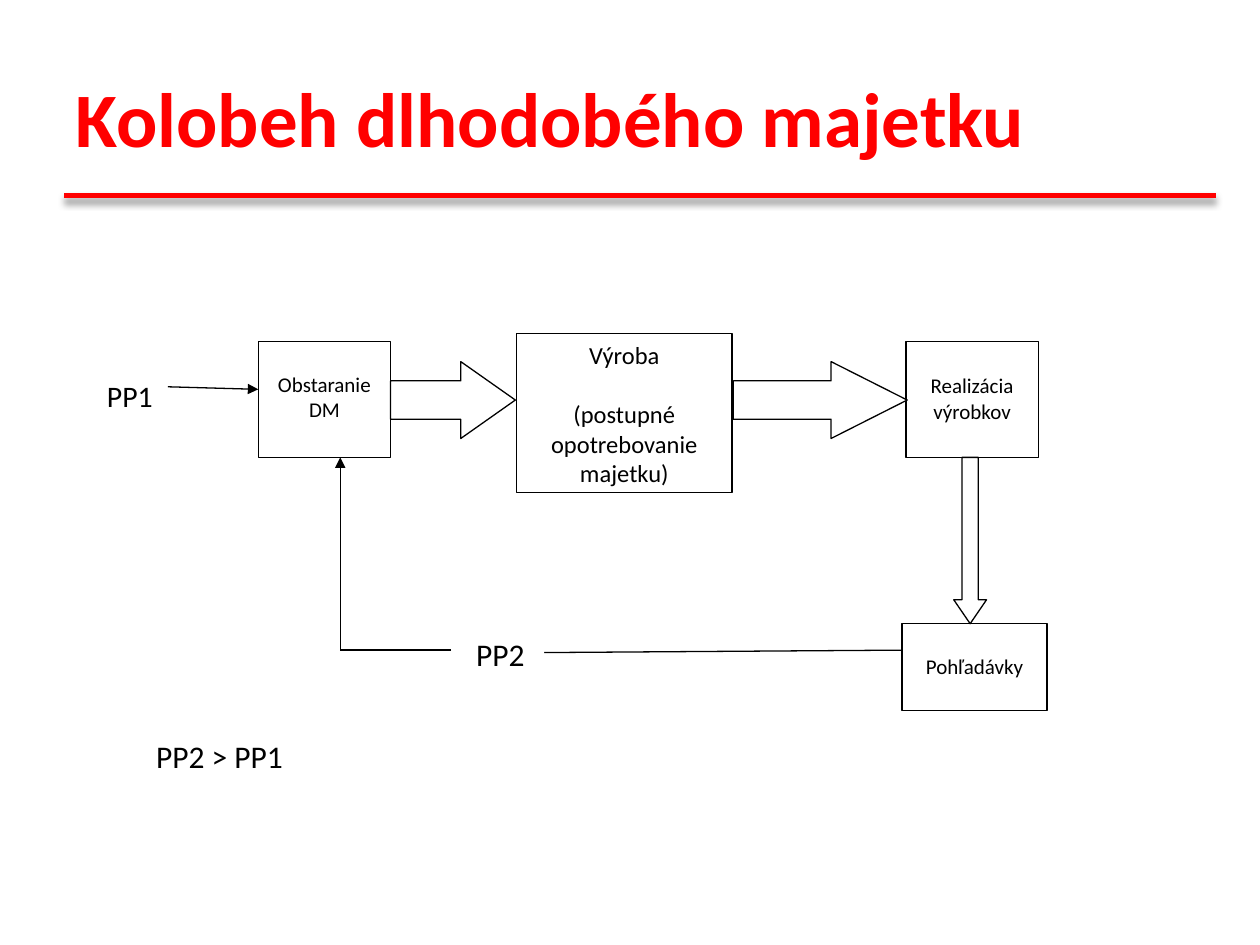
from dataclasses import dataclass

from lxml.etree import SubElement
from pptx import Presentation
from pptx.dml.color import RGBColor
from pptx.enum.shapes import MSO_CONNECTOR, MSO_SHAPE
from pptx.enum.text import MSO_ANCHOR, PP_ALIGN
from pptx.oxml.ns import qn
from pptx.util import Inches, Pt


@dataclass(frozen=True)
class Theme:
    font: str = "Calibri"
    red: RGBColor = RGBColor(0xFF, 0x00, 0x00)
    black: RGBColor = RGBColor(0x00, 0x00, 0x00)
    white: RGBColor = RGBColor(0xFF, 0xFF, 0xFF)
    title: int = 44
    label: int = 18
    start_label: int = 17
    main_step: int = 14
    step: int = 12
    outline: float = 0.75
    rule: int = 3


theme = Theme()
prs = Presentation()
prs.slide_width, prs.slide_height = Inches(10), Inches(7.5)
slide = prs.slides.add_slide(prs.slide_layouts[6])


def write(holder, lines, size, color=theme.black, align=PP_ALIGN.LEFT,
          anchor=MSO_ANCHOR.TOP, top=0.05, side=0.1, gap=0, bold=False):
    frame = holder.text_frame
    frame.word_wrap = True
    frame.vertical_anchor = anchor
    frame.margin_top = Inches(top)
    frame.margin_right = Inches(side)
    for i, line in enumerate(lines):
        paragraph = frame.paragraphs[0] if i == 0 else frame.add_paragraph()
        paragraph.text = line
        paragraph.alignment = align
        if i:
            paragraph.space_before = Pt(gap)
        font = paragraph.font
        font.name, font.size, font.bold = theme.font, Pt(size), bold
        font.color.rgb = color


def draw_line(x1, y1, x2, y2, color=theme.black, width=theme.outline, arrow=False):
    line = slide.shapes.add_connector(
        MSO_CONNECTOR.STRAIGHT, Inches(x1), Inches(y1), Inches(x2), Inches(y2))
    line.line.color.rgb = color
    line.line.width = Pt(width)
    if arrow:
        SubElement(line.line._get_or_add_ln(), qn("a:tailEnd"), type="triangle")
    return SubElement(line._element.spPr, qn("a:effectLst"))


# Title and its shadowed rule
rule_effects = draw_line(0.51, 1.55, 9.65, 1.55, theme.red, theme.rule)
shadow = SubElement(rule_effects, qn("a:outerShdw"), blurRad=str(Pt(4)),
                    dist=str(Pt(3)), dir="5400000", rotWithShape="0")
shadow_color = SubElement(shadow, qn("a:srgbClr"), val=str(theme.black))
SubElement(shadow_color, qn("a:alpha"), val="40000")

title = slide.shapes.add_textbox(Inches(0.5), Inches(0.3), Inches(9), Inches(1.25))
write(title, ["Kolobeh dlhodobého majetku"], theme.title, theme.red,
      anchor=MSO_ANCHOR.MIDDLE, bold=True)

# Steps of the cycle: position, lines, size, top margin, gap between lines
steps = [
    ((2.05, 2.71, 1.05, 0.92), ["Obstaranie", "DM"], theme.step, 0.24, 0),
    ((7.19, 2.71, 1.05, 0.92), ["Realizácia výrobkov"], theme.step, 0.25, 0),
    ((4.1, 2.65, 1.71, 1.26), ["Výroba", "(postupné opotrebovanie majetku)"],
     theme.main_step, 0.05, 17),
    ((7.16, 4.95, 1.15, 0.69), ["Pohľadávky"], theme.step, 0.24, 0),
]
for place, lines, size, top, gap in steps:
    step = slide.shapes.add_shape(MSO_SHAPE.RECTANGLE, *map(Inches, place))
    step.shadow.inherit = False
    step.fill.solid()
    step.fill.fore_color.rgb = theme.white
    step.line.color.rgb = theme.black
    step.line.width = Pt(theme.outline)
    write(step, lines, size, align=PP_ALIGN.CENTER, top=top, gap=gap)

# Block arrows between the steps: preset, position, head length
flows = [
    (MSO_SHAPE.RIGHT_ARROW, (3.1, 2.87, 0.99, 0.61), 0.71),
    (MSO_SHAPE.RIGHT_ARROW, (5.82, 2.87, 1.38, 0.61), 0.99),
    (MSO_SHAPE.DOWN_ARROW, (7.57, 3.63, 0.26, 1.32), 0.73),
]
for preset, place, head in flows:
    flow = slide.shapes.add_shape(preset, *map(Inches, place))
    flow.shadow.inherit = False
    flow.adjustments[0], flow.adjustments[1] = 0.5, head
    flow.fill.solid()
    flow.fill.fore_color.rgb = theme.white
    flow.line.color.rgb = theme.black
    flow.line.width = Pt(theme.outline)

# Money going in (PP1) and coming back (PP2)
draw_line(1.33, 3.07, 2.05, 3.09, arrow=True)
draw_line(7.16, 5.16, 4.2, 5.18)
draw_line(3.58, 5.16, 2.7, 5.16)
draw_line(2.7, 5.16, 2.7, 3.63, arrow=True)

# Money labels
for place, label, size, top in [
    ((0.75, 2.61, 0.58, 0.8), "PP1", theme.start_label, 0.39),
    ((3.68, 4.99, 0.64, 0.78), "PP2", theme.label, 0.05),
]:
    money = slide.shapes.add_shape(MSO_SHAPE.RECTANGLE, *map(Inches, place))
    money.shadow.inherit = False
    money.fill.solid()
    money.fill.fore_color.rgb = theme.white
    money.line.fill.background()
    write(money, [label], size, top=top, side=0)

# Conclusion
conclusion = slide.shapes.add_textbox(Inches(1.14), Inches(5.8), Inches(4.02), Inches(0.4))
write(conclusion, ["PP2 > PP1"], theme.label)

prs.save("out.pptx")
